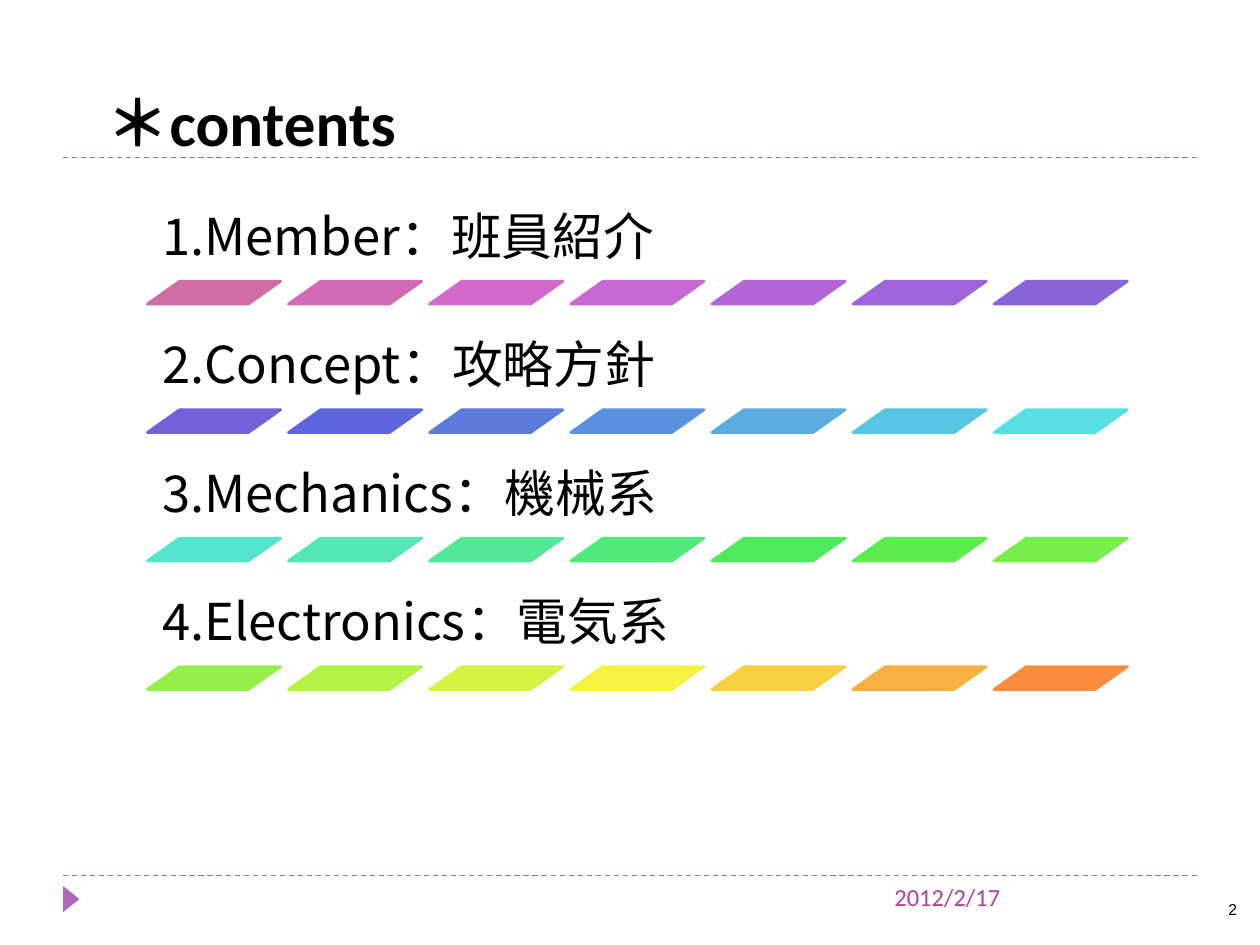
"""Build the contents slide: four headings, each over a band of coloured bars."""
from dataclasses import dataclass
from typing import Any

from lxml import etree
from pptx import Presentation
from pptx import util as u
from pptx.dml.color import RGBColor
from pptx.enum import dml, shapes, text
from pptx.oxml.ns import qn

BLACK = RGBColor(0x00, 0x00, 0x00)
PURPLE = RGBColor(0xAC, 0x66, 0xBB)
MAGENTA = RGBColor(0xB1, 0x3F, 0x9A)


def palette(codes):
    return [RGBColor.from_string(c) for c in codes.split()]


SECTIONS = [
    ("1.Member：班員紹介", palette("CF6DA4 D16BB7 D26ACB C768D4 B366D5 9F64D7 8963D8")),
    ("2.Concept：攻略方針", palette("7261DA 5F65DC 5D7BDD 5B92DF 5AABE0 58C5E2 56E0E3")),
    ("3.Mechanics：機械系", palette("54E5CE 53E7B3 51E897 4FEA7B 4DEB5C 5AED4B 77EF4A")),
    ("4.Electronics：電気系", palette("96F048 B5F246 D6F344 F5F242 F7D141 F8B03F FA8D3D")),
]
LEFT, TOP = 2.97, 3.84
ROW_STEP, BAR_STEP = 2.59, 17.07 / 6
HEADING_H = 1.83


@dataclass
class Deck:
    slide: Any
    heading_font: str = "Noto Sans CJK JP"
    body_font: str = "Calibri"
    title_font: str = "Lato"
    number_font: str = "Arial"

    def set_face(self, font, name):
        font.name = name
        etree.SubElement(font._rPr, qn("a:ea"), typeface=name)

    def text(self, box, runs, size, color=BLACK, bold=False, inset=None,
             anchor=text.MSO_ANCHOR.TOP, align=None, spacing=None):
        tf = self.slide.shapes.add_textbox(*map(u.Cm, box)).text_frame
        tf.word_wrap = True
        tf.vertical_anchor = anchor
        if inset is not None:
            tf.margin_left = tf.margin_right = u.Cm(inset)
            tf.margin_top = tf.margin_bottom = u.Cm(inset)
        p = tf.paragraphs[0]
        p.alignment, p.line_spacing = align, spacing
        p.font.size, p.font.bold = u.Pt(size), bold
        p.font.color.rgb = color
        for content, face in runs:
            r = p.add_run()
            r.text = content
            self.set_face(r.font if len(runs) > 1 else p.font, face)

    def shape(self, kind, box, color, adj, outline=None, rotation=0):
        sp = self.slide.shapes.add_shape(kind, *map(u.Cm, box))
        sp.shadow.inherit = False
        sp.adjustments[0] = adj
        sp.rotation = rotation
        sp.fill.solid()
        sp.fill.fore_color.rgb = color
        if outline:
            sp.line.color.rgb = color
            sp.line.width = u.Pt(outline)
        else:
            sp.line.fill.background()

    def rule(self, y):
        ln = self.slide.shapes.add_connector(
            shapes.MSO_CONNECTOR.STRAIGHT, u.Cm(1.27), u.Cm(y), u.Cm(24.13), u.Cm(y))
        ln.line.color.rgb = PURPLE
        ln.line.width = u.Pt(0.75)
        ln.line.dash_style = dml.MSO_LINE.DASH
        etree.SubElement(ln._element.spPr, qn("a:effectLst"))

    def section(self, top, heading, colors):
        self.text((LEFT, top, 20.17, HEADING_H), [(heading, self.heading_font)], 29,
                  inset=0.3, anchor=text.MSO_ANCHOR.BOTTOM, spacing=0.9)
        for i, color in enumerate(colors):
            box = (LEFT + i * BAR_STEP, top + HEADING_H, 2.69, 0.46)
            self.shape(shapes.MSO_SHAPE.PARALLELOGRAM, box, color, 1.41, outline=1.5)


def main():
    prs = Presentation()
    prs.slide_width, prs.slide_height = u.Cm(25.4), u.Cm(19.05)
    s = Deck(prs.slides.add_slide(prs.slide_layouts[6]))
    for y in (17.65, 3.18):
        s.rule(y)
    s.shape(shapes.MSO_SHAPE.ISOSCELES_TRIANGLE, (1.17, 17.96, 0.53, 0.33),
            PURPLE, 0.5, rotation=90)
    s.text((17.78, 17.65, 6.35, 1.02), [("2012/2/17", s.body_font)], 14, MAGENTA)
    for i, (heading, colors) in enumerate(SECTIONS):
        s.section(TOP + i * ROW_STEP, heading, colors)
    s.text((1.9, 1.4, 21.79, 1.93), [("＊", s.title_font), ("contents", s.body_font)],
           36, bold=True, anchor=text.MSO_ANCHOR.BOTTOM)
    s.text((23.67, 18.14, 1.27, 0.38), [("2", s.number_font)], 9, inset=0,
           anchor=text.MSO_ANCHOR.MIDDLE, align=text.PP_ALIGN.RIGHT)
    prs.save("out.pptx")


if __name__ == "__main__":
    main()
